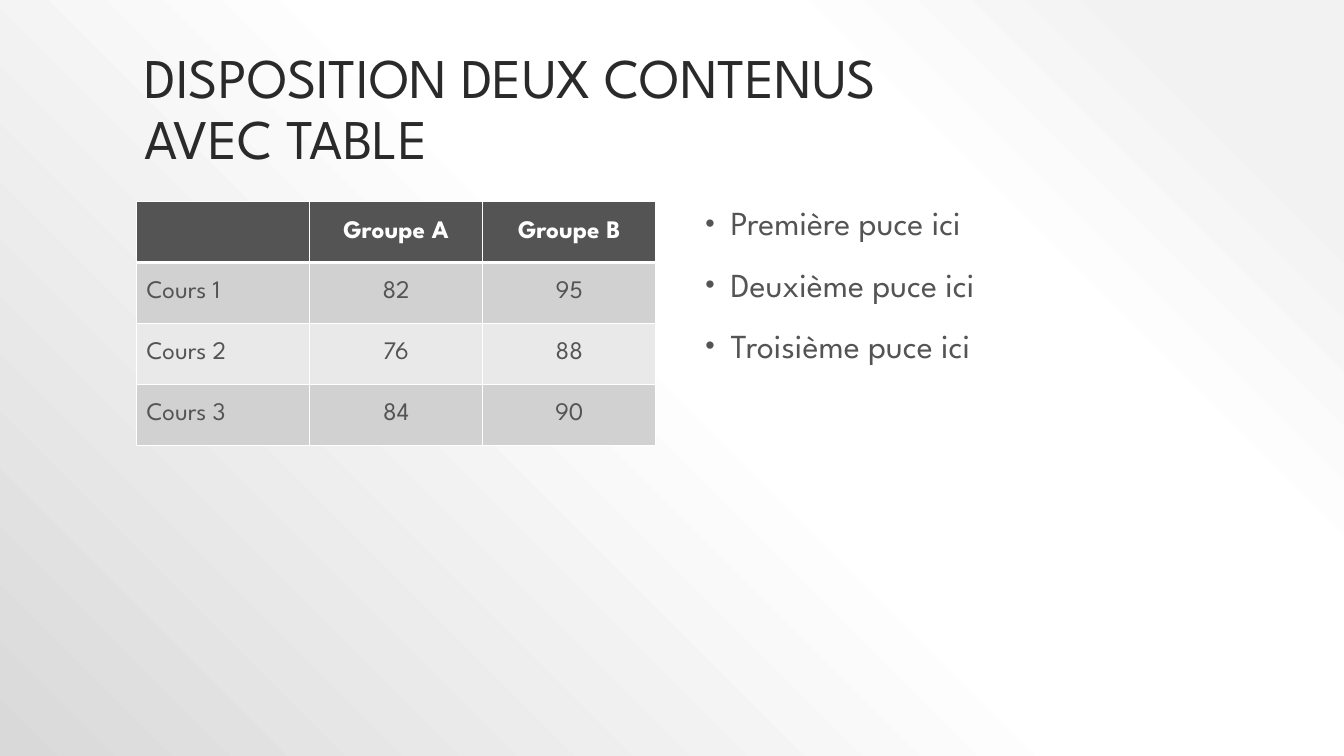
from lxml.etree import SubElement
from pptx import Presentation
from pptx.dml.color import RGBColor
from pptx.enum.text import MSO_ANCHOR as Anchor, MSO_AUTO_SIZE as AutoSize, PP_ALIGN as Align
from pptx.oxml import parse_xml
from pptx.oxml.ns import nsdecls, qn
from pptx.util import Pt


def rgb(colour):
    return RGBColor.from_string(colour)


def write(paragraph, text, size=18, colour="545454", bold=False, align=Align.LEFT,
          spacing=1.0, before=0, font="League Spartan"):
    paragraph.alignment = align
    paragraph.line_spacing = spacing
    paragraph.space_before = Pt(before)
    for index, line in enumerate(text.splitlines()):
        if index:
            paragraph.add_line_break()
        run = paragraph.add_run()
        run.text = line
        run.font.name = font
        run.font.size = Pt(size)
        run.font.bold = bold
        run.font.color.rgb = rgb(colour)


class CourseSlide:
    ink = "545454"
    title_ink = "2A2A2A"
    white = "FFFFFF"
    bands = ("D1D1D1", "E9E9E9")

    def __init__(self, deck):
        self.slide = deck.slides.add_slide(deck.slide_layouts[1])

    def background(self, stops):
        self.slide.background.fill.gradient()
        gradient = self.slide.element.find(f".//{qn('a:gradFill')}")
        for child in list(gradient):
            gradient.remove(child)
        stop_list = SubElement(gradient, qn("a:gsLst"))
        for position, colour in stops:
            stop = SubElement(stop_list, qn("a:gs"), pos=str(position * 1000))
            SubElement(stop, qn("a:srgbClr"), val=str(rgb(colour)))
        circle = SubElement(gradient, qn("a:path"), path="circle")
        SubElement(circle, qn("a:fillToRect"), l="100000", b="100000")

    def place(self, holder, box, anchor):
        holder.left, holder.top, holder.width, holder.height = map(Pt, box)
        frame = holder.text_frame
        frame.word_wrap = True
        frame.auto_size = AutoSize.NONE
        frame.vertical_anchor = anchor
        return frame

    def title(self, text, box):
        frame = self.place(self.slide.shapes.title, box, Anchor.BOTTOM)
        write(frame.paragraphs[0], text, size=40, colour=self.title_ink, spacing=0.9)

    def bullets(self, points, box):
        frame = self.place(self.slide.placeholders[1], box, Anchor.TOP)
        for index, point in enumerate(points):
            paragraph = frame.add_paragraph() if index else frame.paragraphs[0]
            properties = paragraph._p.get_or_add_pPr()
            properties.set("marL", str(Pt(21.6)))
            properties.set("indent", str(-Pt(18)))
            bullet_colour = SubElement(properties, qn("a:buClr"))
            SubElement(bullet_colour, qn("a:srgbClr"), val=str(rgb(self.ink)))
            SubElement(properties, qn("a:buSzPct"), val="80000")
            SubElement(properties, qn("a:buChar"), char="•")
            write(paragraph, point, size=24, colour=self.ink, spacing=0.9,
                  before=18 if index else 0)

    def borders(self, cell, **widths):
        properties = cell._tc.get_or_add_tcPr()
        for index, side in enumerate("LRTB"):
            properties.insert(index, parse_xml(
                f'<a:ln{side} {nsdecls("a")} w="{Pt(widths.get(side, 1))}"><a:solidFill>'
                f'<a:srgbClr val="{rgb(self.white)}"/></a:solidFill></a:ln{side}>'))

    def table(self, rows, box, row_height):
        grid = self.slide.shapes.add_table(len(rows), len(rows[0]), *map(Pt, box)).table
        for r, row in enumerate(rows):
            grid.rows[r].height = Pt(row_height)
            header = r == 0
            for c, text in enumerate(row):
                cell = grid.cell(r, c)
                cell.vertical_anchor = Anchor.MIDDLE
                cell.fill.solid()
                cell.fill.fore_color.rgb = rgb(self.ink if header else self.bands[(r - 1) % 2])
                self.borders(cell, B=3 if header else 1, T=3 if r == 1 else 1)
                write(cell.text_frame.paragraphs[0], text, bold=header,
                      colour=self.white if header else self.ink,
                      align=Align.CENTER if c else Align.LEFT)


def main():
    deck = Presentation()
    deck.slide_width, deck.slide_height = Pt(960), Pt(540)
    page = CourseSlide(deck)
    page.background([(10, "F2F2F2"), (28, "FFFFFF"), (48, "FFFFFF"), (100, "D9D9D9")])
    page.title("""DISPOSITION DEUX CONTENUS 
AVEC TABLE""", (96, 21.6, 768, 104.4))
    scores = [
        ("", "Groupe A", "Groupe B"),
        ("Cours 1", "82", "95"),
        ("Cours 2", "76", "88"),
        ("Cours 3", "84", "90"),
    ]
    page.table(scores, (97.5, 144, 371, 174), row_height=43.5)
    page.bullets(["Première puce ici", "Deuxième puce ici", "Troisième puce ici"],
                 (493, 144, 371, 342))
    deck.save("out.pptx")


if __name__ == "__main__":
    main()
